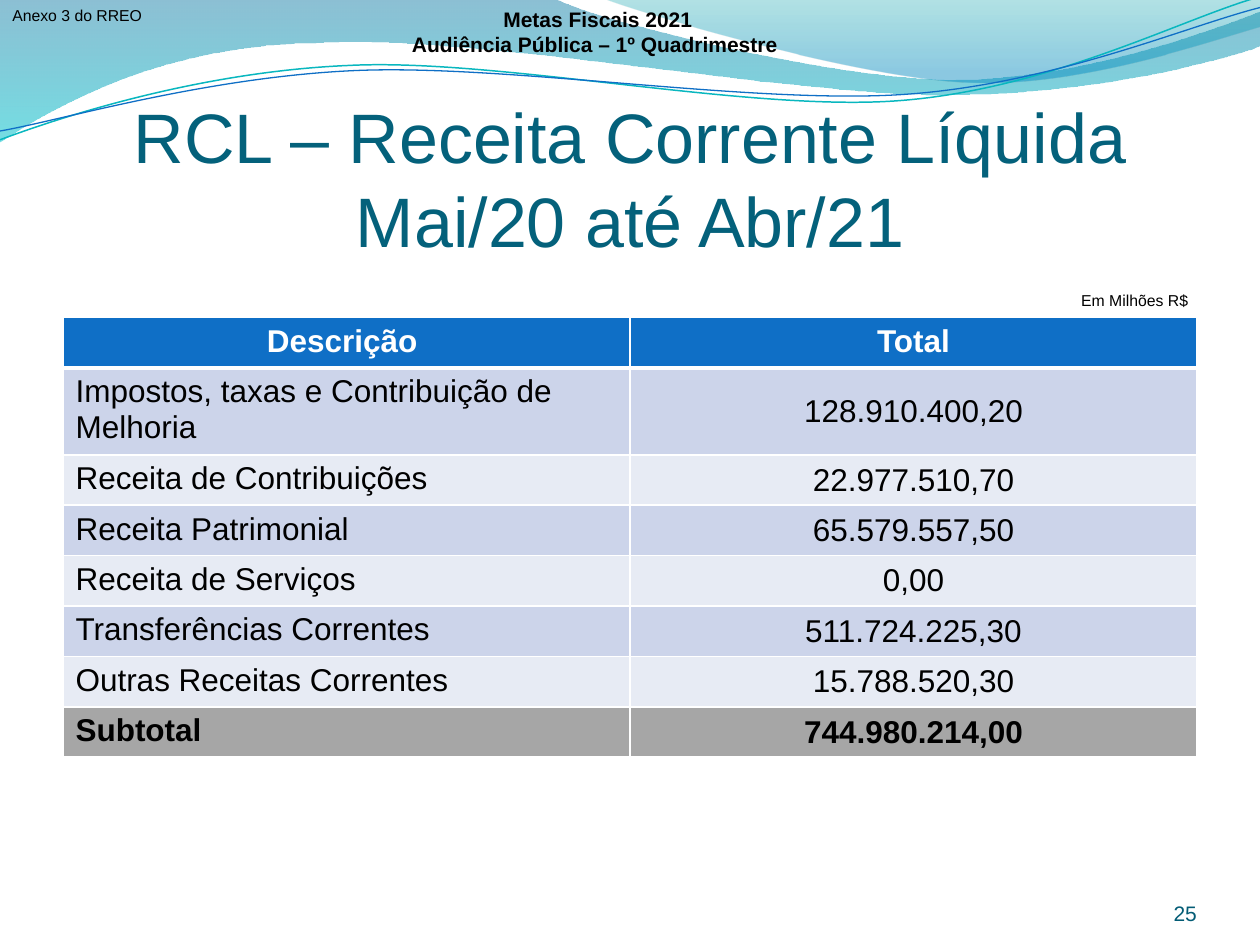
from lxml import etree
from pptx import Presentation
from pptx.dml.color import RGBColor
from pptx.enum.text import MSO_ANCHOR, MSO_AUTO_SIZE, PP_ALIGN
from pptx.oxml.ns import qn
from pptx.util import Inches, Pt

LEFT, CENTER, RIGHT = PP_ALIGN.LEFT, PP_ALIGN.CENTER, PP_ALIGN.RIGHT
TOP, MIDDLE, BOTTOM = MSO_ANCHOR.TOP, MSO_ANCHOR.MIDDLE, MSO_ANCHOR.BOTTOM
FIT_SHAPE, FIT_NONE = MSO_AUTO_SIZE.SHAPE_TO_FIT_TEXT, MSO_AUTO_SIZE.NONE
FONT = "Arial"
TITLE_ONLY = 5

LEFT_WAVE = [
    (0, 0), (4.4, -0.01),
    (4.76, 0.17, 6.64, 0.63, 7.58, 0.63), (8.53, 0.63, 9.58, 0.26, 10, 0.09),
    (10.01, 0.36),
    (9.83, 0.44, 8.7, 0.76, 7.46, 0.75), (6.22, 0.75, 3.82, 0.28, 2.57, 0.34),
    (1.29, 0.35, 0.46, 0.83, -0.01, 1.13),
]
RIGHT_WAVE = [
    (4.79, -0.01),
    (5.09, 0.11, 6.82, 0.62, 7.69, 0.65), (8.56, 0.69, 9.61, 0.32, 10, 0.21),
    (10, 0),
]
TEAL_CURVE = [
    (0, 1.11),
    (0.48, 0.93, 1.58, 0.57, 2.77, 0.52), (3.95, 0.46, 5.93, 0.89, 7.13, 0.8),
    (8.33, 0.71, 9.38, 0.15, 9.98, -0.02),
]
BLUE_CURVE = [
    (0, 1.04),
    (0.47, 0.96, 1.64, 0.61, 2.83, 0.56), (4.03, 0.51, 5.97, 0.83, 7.17, 0.75),
    (8.36, 0.67, 9.41, 0.21, 10, 0.06),
]
ROWS = [
    ("Descrição ", "Total"),
    ("Impostos, taxas e Contribuição de Melhoria", "128.910.400,20"),
    ("Receita de Contribuições", "22.977.510,70"),
    ("Receita Patrimonial", "65.579.557,50"),
    ("Receita de Serviços", "0,00"),
    ("Transferências Correntes", "511.724.225,30"),
    ("Outras Receitas Correntes", "15.788.520,30"),
    ("Subtotal", "744.980.214,00"),
]


def rgb(color):
    return RGBColor.from_string(color)


def write_text(frame, lines, size, color, align, bold=False):
    for index, line in enumerate(lines):
        paragraph = frame.add_paragraph() if index else frame.paragraphs[0]
        paragraph.alignment = align
        run = paragraph.add_run()
        run.text = line
        run.font.name = FONT
        run.font.size = Pt(size)
        run.font.bold = bold
        run.font.color.rgb = rgb(color)


def set_frame(frame, anchor, margins, fit):
    frame.word_wrap = True
    frame.auto_size = fit
    frame.vertical_anchor = anchor
    (frame.margin_left, frame.margin_top,
     frame.margin_right, frame.margin_bottom) = [Inches(margin) for margin in margins]


def add_label(slide, box, lines, size, color, align, anchor=TOP, bold=False,
              margins=(0.1, 0.05, 0.1, 0.05), fit=FIT_SHAPE):
    shape = slide.shapes.add_textbox(*[Inches(length) for length in box])
    set_frame(shape.text_frame, anchor, margins, fit)
    write_text(shape.text_frame, lines, size, color, align, bold)


def add_outline(slide, segments, closed):
    start, *rest = [[Inches(value) for value in segment] for segment in segments]
    points = []
    for segment in rest:
        points.extend(zip(segment[::2], segment[1::2]))
    builder = slide.shapes.build_freeform(*start, scale=1)
    builder.add_line_segments(points, close=closed)
    shape = builder.convert_to_shape()
    shape.shadow.inherit = False
    steps = iter(list(shape._element.iter(qn("a:lnTo"))))
    for segment in rest:
        first = next(steps)
        if len(segment) == 6:
            curve = etree.Element(qn("a:cubicBezTo"))
            first.addprevious(curve)
            for step in (first, next(steps), next(steps)):
                curve.append(step[0])
                step.getparent().remove(step)
    return shape


def add_wave(slide, segments, stops, angle):
    shape = add_outline(slide, segments, True)
    shape.line.fill.background()
    shape.fill.gradient()
    shape.fill.gradient_angle = angle
    for stop, (position, color, _) in zip(shape.fill.gradient_stops, stops):
        stop.position = position
        stop.color.rgb = rgb(color)
    gradient = shape._element.spPr.find(qn("a:gradFill"))
    for color, (_, _, opacity) in zip(gradient.iter(qn("a:srgbClr")), stops):
        etree.SubElement(color, qn("a:alpha"), val=str(opacity * 1000))


def add_curve(slide, segments, color, width):
    shape = add_outline(slide, segments, False)
    shape.fill.background()
    shape.line.color.rgb = rgb(color)
    shape.line.width = Pt(width)


def set_borders(cell, top, bottom):
    properties = cell._tc.get_or_add_tcPr()
    widths = {"a:lnL": 0.96, "a:lnR": 0.96, "a:lnT": top, "a:lnB": bottom}
    for index, (tag, width) in enumerate(widths.items()):
        line = etree.Element(qn(tag), w=str(int(Pt(width))))
        fill = etree.SubElement(line, qn("a:solidFill"))
        etree.SubElement(fill, qn("a:srgbClr"), val="FFFFFF")
        properties.insert(index, line)


def add_revenue_table(slide):
    heights = [0.4, 0.69] + [0.4] * (len(ROWS) - 2)
    frame = slide.shapes.add_table(len(ROWS), 2, Inches(0.5), Inches(2.52),
                                   Inches(9), Inches(sum(heights)))
    table = frame.table
    last = len(ROWS) - 1
    for row, texts in enumerate(ROWS):
        table.rows[row].height = Inches(heights[row])
        header = row == 0
        if header:
            fill = "0F6FC6"
        elif row == last:
            fill = "A6A6A6"
        else:
            fill = "CCD4EA" if row % 2 else "E7EBF4"
        for column, text in enumerate(texts):
            cell = table.cell(row, column)
            cell.fill.solid()
            cell.fill.fore_color.rgb = rgb(fill)
            cell.vertical_anchor = MIDDLE if column and not header else TOP
            if column and row == last:
                cell.margin_left = cell.margin_right = Inches(0.01)
            write_text(cell.text_frame, [text], 18, "FFFFFF" if header else "000000",
                       CENTER if header or column else LEFT, row in (0, last))
            set_borders(cell, 3 if row == 1 else 0.96, 3 if header else 0.96)


def add_title(slide, lines):
    title = slide.shapes.title
    title.left, title.top, title.width, title.height = [
        Inches(length) for length in (0.5, 0.76, 9, 1.25)]
    set_frame(title.text_frame, MIDDLE, (0, 0.05, 0, 0), FIT_NONE)
    write_text(title.text_frame, lines, 40, "04617B", CENTER)
    slide.shapes._spTree.append(title._element)


def main():
    presentation = Presentation()
    presentation.slide_width = Inches(10)
    presentation.slide_height = Inches(7.5)
    slide = presentation.slides.add_slide(presentation.slide_layouts[TITLE_ONLY])
    add_wave(slide, LEFT_WAVE, [(0, "0074A0", 45), (1, "00C4CD", 55)], 270)
    add_wave(slide, RIGHT_WAVE, [(0.2, "008ABF", 45), (1, "00A0A8", 30)], 90)
    add_curve(slide, TEAL_CURVE, "09B7BF", 0.85)
    add_curve(slide, BLUE_CURVE, "0F6FC6", 0.75)
    add_title(slide, ["RCL – Receita Corrente Líquida", "Mai/20 até Abr/21"])
    add_revenue_table(slide)
    add_label(slide, (8.67, 6.95, 0.83, 0.4), ["25"], 12, "035C75", RIGHT, BOTTOM,
              margins=(0, 0, 0, 0), fit=FIT_NONE)
    add_label(slide, (8.48, 2.26, 1.05, 0.25), ["Em Milhões R$"], 9, "000000", CENTER)
    add_label(slide, (0, 0, 1.36, 0.25), ["Anexo 3 do RREO"], 9, "000000", LEFT)
    add_label(slide, (3.05, 0, 3.39, 0.5),
              ["Metas Fiscais 2021", "Audiência Pública – 1º Quadrimestre "],
              12, "000000", CENTER, MIDDLE, bold=True)
    presentation.save("out.pptx")


if __name__ == "__main__":
    main()
